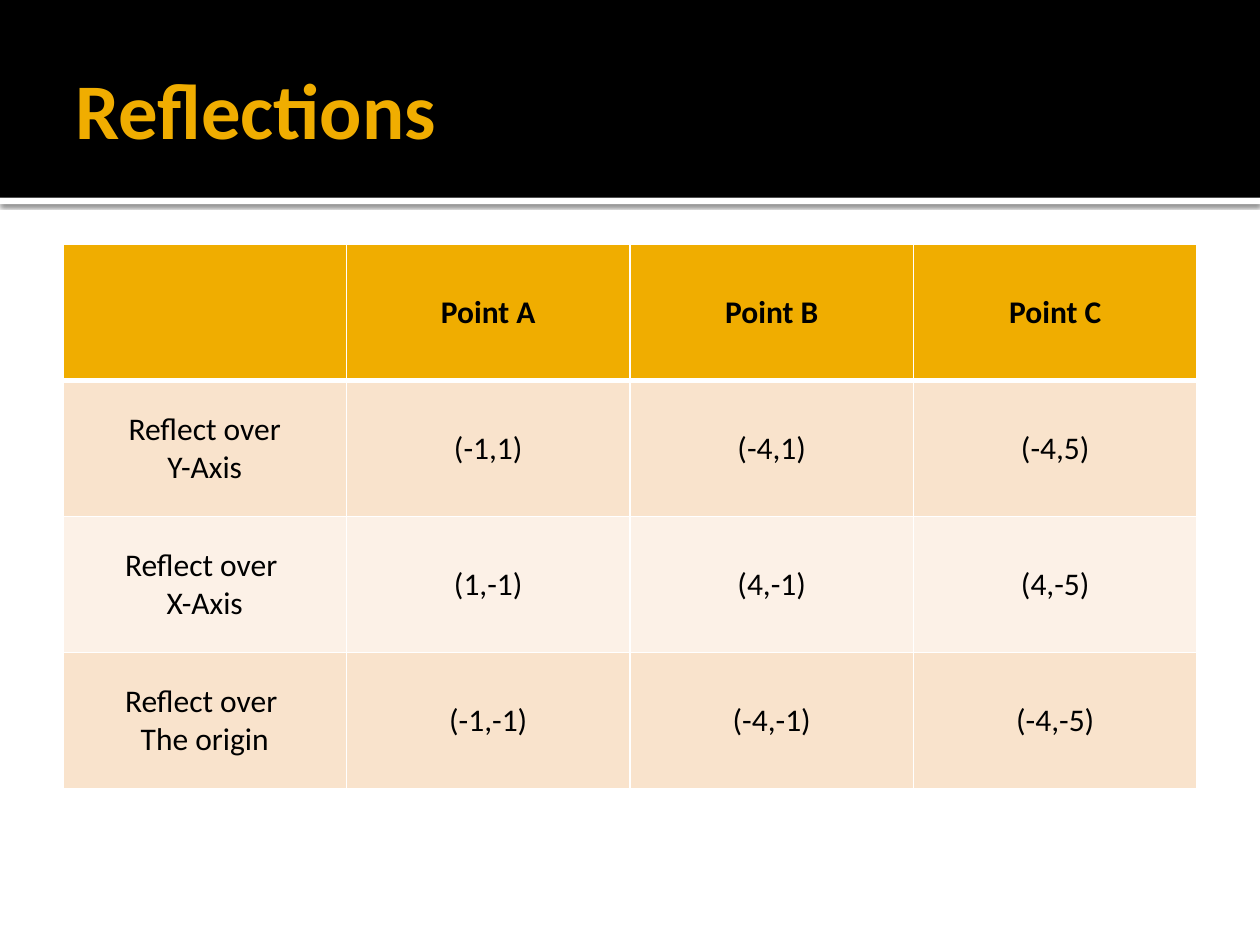
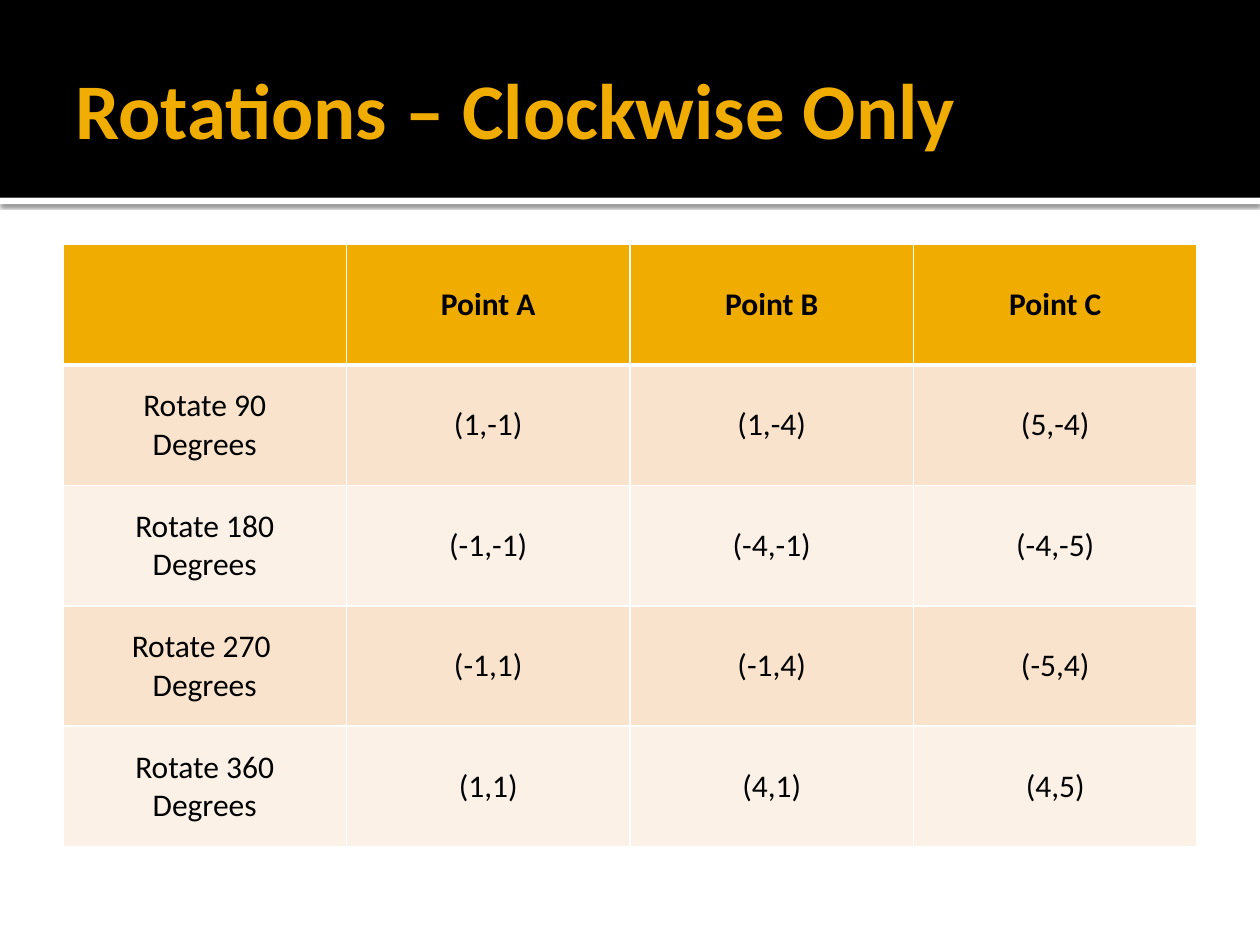
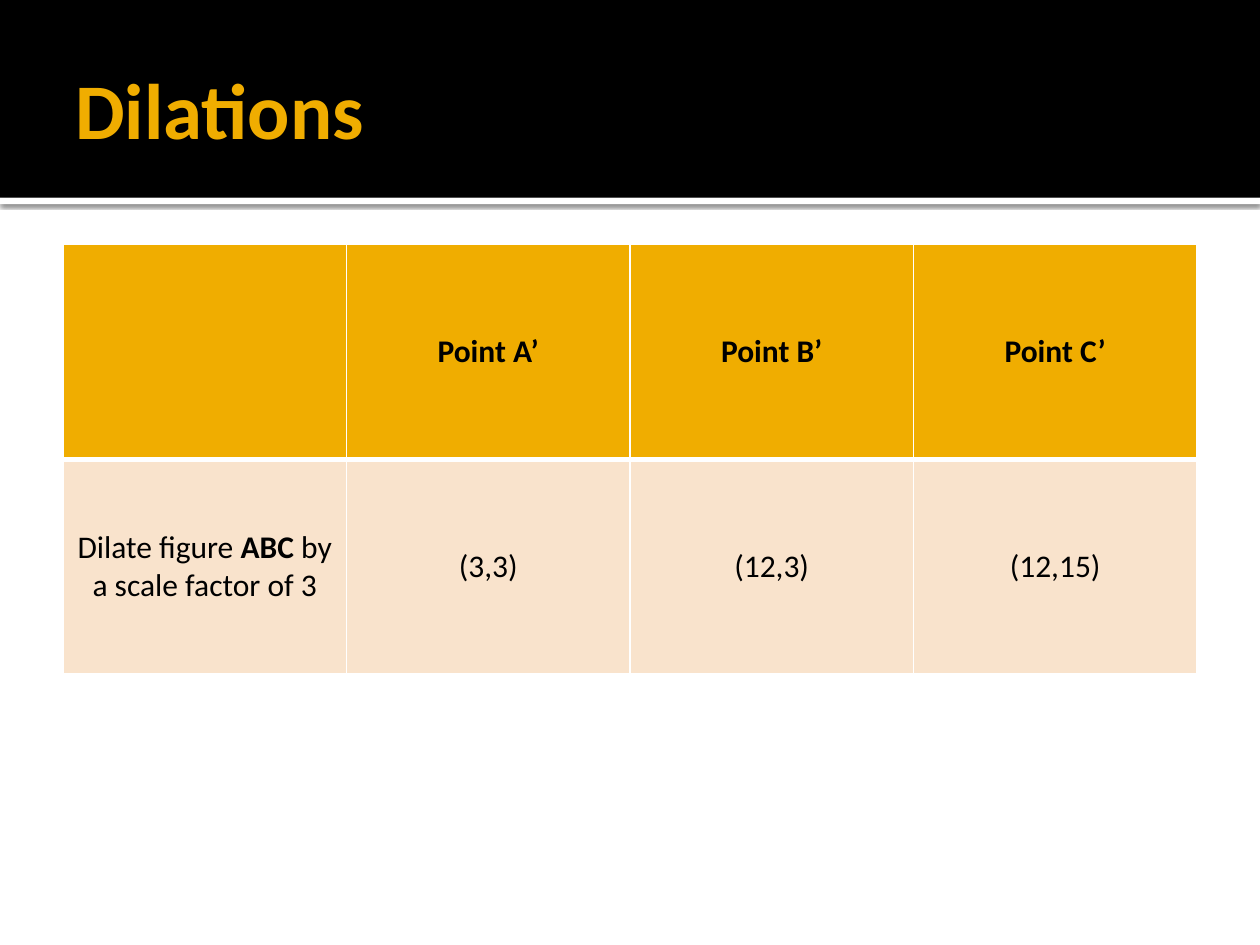
import pptx
import pptx.dml.color
import pptx.enum.shapes
import pptx.enum.text
import pptx.oxml
import pptx.oxml.ns
import pptx.util

PX = 9144
BLACK = pptx.dml.color.RGBColor(0x00, 0x00, 0x00)
WHITE = pptx.dml.color.RGBColor(0xFF, 0xFF, 0xFF)
GOLD = pptx.dml.color.RGBColor(0xF0, 0xAD, 0x00)
PEACH = pptx.dml.color.RGBColor(0xF9, 0xE3, 0xCC)
CREAM = pptx.dml.color.RGBColor(0xFC, 0xF1, 0xE7)
FONT = "Calibri"
NS = pptx.oxml.ns.nsdecls("a")
MIDDLE = pptx.enum.text.MSO_ANCHOR.MIDDLE

BAND_SHADOW = (
    f'<a:effectLst {NS}><a:outerShdw blurRad="31750" dist="10160" dir="5400000" '
    'algn="tl" rotWithShape="0"><a:srgbClr val="000000"><a:alpha val="60000"/>'
    '</a:srgbClr></a:outerShdw></a:effectLst>'
)

POINTS = ["", "Point A", "Point B", "Point C"]
SLIDES = [
    ("Reflections", 432, [
        POINTS,
        ["Reflect over\nY-Axis", "(-1,1)", "(-4,1)", "(-4,5)"],
        ["Reflect over \nX-Axis", "(1,-1)", "(4,-1)", "(4,-5)"],
        ["Reflect over \nThe origin", "(-1,-1)", "(-4,-1)", "(-4,-5)"],
    ]),
    ("Rotations – Clockwise Only", 478, [
        POINTS,
        ["Rotate 90\nDegrees", "(1,-1)", "(1,-4)", "(5,-4)"],
        ["Rotate 180\nDegrees", "(-1,-1)", "(-4,-1)", "(-4,-5)"],
        ["Rotate 270 \nDegrees", "(-1,1)", "(-1,4)", "(-5,4)"],
        ["Rotate 360\nDegrees", "(1,1)", "(4,1)", "(4,5)"],
    ]),
    ("Dilations", 341, [
        ["", "Point A’", "Point B’", "Point C’"],
        ["Dilate figure *ABC* by a scale factor of 3", "(3,3)", "(12,3)", "(12,15)"],
    ]),
]


def add_span(para, text, size, color, bold):
    span = para.add_run()
    span.text = text
    span.font.name = FONT
    span.font.size = pptx.util.Pt(size)
    span.font.color.rgb = color
    span.font.bold = bold


def add_borders(cell, widths):
    for side, width in widths.items():
        cell._tc.get_or_add_tcPr().append(pptx.oxml.parse_xml(
            f'<a:ln{side} {NS} w="{pptx.util.Pt(width)}"><a:solidFill>'
            f'<a:srgbClr val="{WHITE}"/></a:solidFill></a:ln{side}>'))


deck = pptx.Presentation()
deck.slide_width = 1000 * PX
deck.slide_height = 750 * PX

for title, table_height, rows in SLIDES:
    page = deck.slides.add_slide(deck.slide_layouts[6])
    page.background.fill.solid()
    page.background.fill.fore_color.rgb = WHITE

    for top, height, color in [(157, 5, WHITE), (0, 157, BLACK)]:
        band = page.shapes.add_shape(
            pptx.enum.shapes.MSO_SHAPE.RECTANGLE, 0, top * PX, 1000 * PX, height * PX)
        band.fill.solid()
        band.fill.fore_color.rgb = color
        band.line.fill.background()
        if color == WHITE:
            band._element.spPr.append(pptx.oxml.parse_xml(BAND_SHADOW))
        else:
            band.shadow.inherit = False

    box = page.shapes.add_textbox(50 * PX, 17 * PX, 900 * PX, 137 * PX)
    frame = box.text_frame
    frame.word_wrap = True
    frame.vertical_anchor = MIDDLE
    frame.margin_left = 10 * PX
    frame.margin_right = frame.margin_top = frame.margin_bottom = 5 * PX
    add_span(frame.paragraphs[0], title, 45, GOLD, True)

    table = page.shapes.add_table(
        len(rows), len(POINTS), 50 * PX, 194 * PX, 900 * PX, table_height * PX).table
    for row_index, row in enumerate(rows):
        header = row_index == 0
        fill = GOLD if header else PEACH if row_index % 2 else CREAM
        widths = {"L": 1, "R": 1, "T": 3 if row_index == 1 else 1, "B": 3 if header else 1}
        for column_index, text in enumerate(row):
            cell = table.cell(row_index, column_index)
            cell.vertical_anchor = MIDDLE
            add_borders(cell, widths)
            cell.fill.solid()
            cell.fill.fore_color.rgb = fill
            for line_index, line in enumerate(text.split("\n")):
                frame = cell.text_frame
                para = frame.add_paragraph() if line_index else frame.paragraphs[0]
                para.alignment = pptx.enum.text.PP_ALIGN.CENTER
                for part_index, part in enumerate(line.split("*")):
                    if part:
                        add_span(para, part, 18, BLACK, header or part_index == 1)

deck.save("out.pptx")
